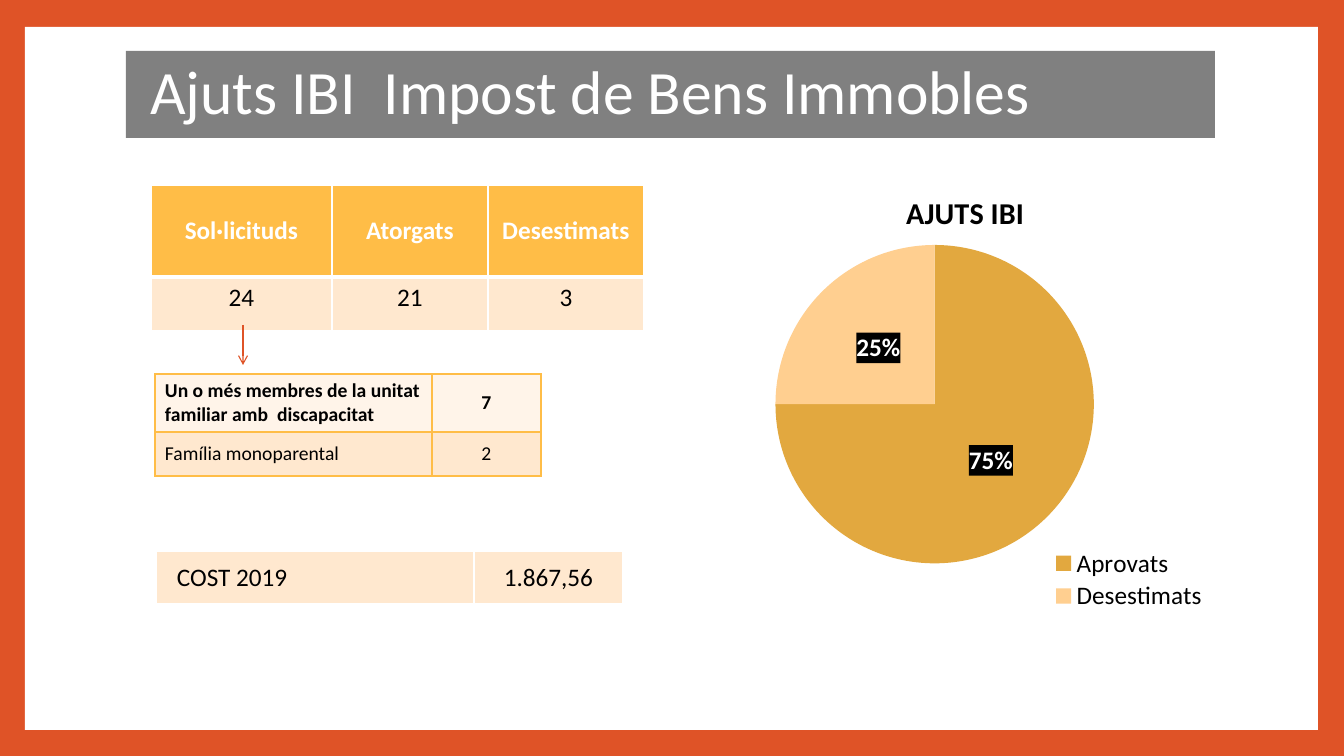
from lxml.etree import SubElement
from pptx import Presentation
from pptx.chart.data import CategoryChartData
from pptx.dml.color import RGBColor
from pptx.enum.chart import XL_CHART_TYPE, XL_LABEL_POSITION, XL_LEGEND_POSITION
from pptx.enum.shapes import MSO_CONNECTOR, MSO_SHAPE
from pptx.enum.text import MSO_ANCHOR, PP_ALIGN
from pptx.oxml import parse_xml
from pptx.oxml.ns import nsdecls, qn
from pptx.util import Pt

EMU_PER_PX = 12192000 / 1344
FONT = "Calibri"
COLORS = {
    "frame": "DF5327", "white": "FFFFFF", "black": "000000", "banner": "808080",
    "amber": "FFBD47", "peach": "FFE8CF", "cream": "FFF4E9",
    "approved": "E2A83F", "rejected": "FFCF90",
}


def px(length):
    """Turn a length in px into EMU."""
    return round(length * EMU_PER_PX)


def place(*lengths):
    """Turn several px lengths into EMU."""
    return [px(length) for length in lengths]


def rgb(name):
    """Look up a named colour."""
    return RGBColor.from_string(COLORS[name])


def style_font(font, size=18, color="black", bold=False):
    """Set the face, size, colour and weight of a font."""
    font.name, font.size, font.bold = FONT, Pt(size), bold
    font.color.rgb = rgb(color)


def write(frame, text, align=PP_ALIGN.LEFT, spacing=None, **font):
    """Write one formatted paragraph into a text frame."""
    frame.word_wrap = True
    para = frame.paragraphs[0]
    para.alignment = align
    para.line_spacing = spacing
    span = para.add_run()
    span.text = text
    style_font(span.font, **font)


def add_box(page, box, color):
    """Add a plain filled rectangle."""
    shape = page.shapes.add_shape(MSO_SHAPE.RECTANGLE, *place(*box))
    shape.shadow.inherit = False
    shape.fill.solid()
    shape.fill.fore_color.rgb = rgb(color)
    shape.line.fill.background()
    return shape


def add_banner(page, box, text):
    """Add the title banner."""
    banner = add_box(page, box, "banner")
    frame = banner.text_frame
    frame.margin_left = px(24)
    frame.vertical_anchor = MSO_ANCHOR.MIDDLE
    write(frame, text, spacing=0.9, size=44, color="white")


def set_borders(cell, color, top=1, bottom=1):
    """Draw the four borders of a table cell, with widths in points."""
    properties = cell._tc.get_or_add_tcPr()
    for side, width in (("L", 1), ("R", 1), ("T", top), ("B", bottom)):
        line = SubElement(properties, qn(f"a:ln{side}"), w=str(Pt(width)))
        fill = SubElement(line, qn("a:solidFill"))
        SubElement(fill, qn("a:srgbClr"), val=COLORS[color])


def add_grid(page, corner, widths, heights, rows, styles, border="white", rule=1, indent=10):
    """Add a table with one style per row, and a rule under its first row."""
    size = sum(widths), sum(heights)
    table = page.shapes.add_table(len(rows), len(widths), *place(*corner, *size)).table
    table.first_row = table.horz_banding = False
    for column, width in zip(table.columns, widths):
        column.width = px(width)
    for index, (row, height, values, style) in enumerate(zip(table.rows, heights, rows, styles)):
        row.height = px(height)
        fill, anchor, first_align, font = style
        for position, (cell, value) in enumerate(zip(row.cells, values)):
            set_borders(cell, border, rule if index == 1 else 1, rule if index == 0 else 1)
            cell.fill.solid()
            cell.fill.fore_color.rgb = rgb(fill)
            cell.vertical_anchor = anchor
            if position == 0:
                cell.margin_left = px(indent)
            write(cell.text_frame, value, PP_ALIGN.CENTER if position else first_align, **font)


def add_arrow(page, start, end):
    """Add a thin arrow between two points."""
    arrow = page.shapes.add_connector(MSO_CONNECTOR.STRAIGHT, *place(*start, *end))
    arrow.line.color.rgb = rgb("frame")
    arrow.line.width = Pt(0.79)
    SubElement(arrow.line._get_or_add_ln(), qn("a:tailEnd"), type="arrow")
    SubElement(arrow._element.spPr, qn("a:effectLst"))


def set_layout(element, after, target=None, **fractions):
    """Fix the place of a chart part, as fractions of the chart."""
    for old in element.findall(qn("c:layout")):
        element.remove(old)
    inner = f'<c:layoutTarget val="{target}"/>' if target else ""
    inner += "".join(f'<c:{key}Mode val="edge"/>' for key in "xy")
    inner += "".join(f'<c:{key} val="{value}"/>' for key, value in fractions.items())
    layout = parse_xml(f'<c:layout {nsdecls("c")}><c:manualLayout>{inner}</c:manualLayout></c:layout>')
    anchor = element.find(qn(after)) if after else None
    if anchor is None:
        element.insert(0, layout)
    else:
        anchor.addnext(layout)


def add_pie(page, box, title, shares):
    """Add the pie chart with its title, legend and percentages."""
    data = CategoryChartData()
    data.categories = [name for name, value, color in shares]
    data.add_series("Series 1", [value for name, value, color in shares])
    chart = page.shapes.add_chart(XL_CHART_TYPE.PIE, *place(*box), data).chart
    style_font(chart.font)
    chart.has_title = True
    write(chart.chart_title.text_frame, title, PP_ALIGN.CENTER, size=21.6, bold=True)
    set_layout(chart.chart_title._element, "c:tx", x=0.4, y=0.02)

    chart.has_legend = True
    chart.legend.position = XL_LEGEND_POSITION.RIGHT
    chart.legend.include_in_layout = False
    style_font(chart.legend.font)
    set_layout(chart.legend._element, "c:legendPos", x=0.69, y=0.82, w=0.3, h=0.15)

    plot = chart.plots[0]
    plot.vary_by_categories = True
    set_layout(chart._chartSpace.chart.plotArea, None, "inner", x=0.16, y=0.15, w=0.61, h=0.71)
    series = plot.series[0]
    for index, (name, value, color) in enumerate(shares):
        fill = series.points[index].format.fill
        fill.solid()
        fill.fore_color.rgb = rgb(color)
    labels = series.data_labels
    labels.show_percentage, labels.show_value = True, False
    labels.number_format, labels.number_format_is_linked = "0%", False
    labels.position = XL_LABEL_POSITION.CENTER
    style_font(labels.font, color="white", bold=True)
    backing = parse_xml(
        f'<c:spPr {nsdecls("c", "a")}><a:solidFill>'
        f'<a:srgbClr val="{COLORS["black"]}"/></a:solidFill></c:spPr>')
    labels._element.find(qn("c:txPr")).addprevious(backing)


def build_page(page):
    """Place every region of the slide."""
    middle, left, center = MSO_ANCHOR.MIDDLE, PP_ALIGN.LEFT, PP_ALIGN.CENTER
    page.background.fill.solid()
    page.background.fill.fore_color.rgb = rgb("frame")
    add_box(page, (25, 27, 1293, 703), "white")
    add_banner(page, (126, 51, 1089, 87), "Ajuts IBI  Impost de Bens Immobles")
    add_grid(page, (151, 185), (181, 156, 156), (92, 54),
             [("Sol·licituds", "Atorgats", "Desestimats"), ("24", "21", "3")],
             [("amber", middle, center, {"color": "white", "bold": True}),
              ("peach", MSO_ANCHOR.TOP, center, {})], rule=3)
    add_pie(page, (692, 177, 522, 450), "AJUTS IBI",
            [("Aprovats", 75, "approved"), ("Desestimats", 25, "rejected")])
    add_grid(page, (156, 551), (318, 149), (53,), [("COST 2019", "1.867,56")],
             [("peach", middle, left, {})], indent=21)
    add_grid(page, (155, 374), (277, 109), (58, 44),
             [("Un o més membres de la unitat familiar amb  discapacitat", "7"),
              ("Família monoparental", "2")],
             [("cream", middle, left, {"size": 14, "bold": True}),
              ("peach", middle, left, {"size": 14})], border="amber")
    add_arrow(page, (243, 325), (243, 365))


def main():
    """Build and save the deck."""
    deck = Presentation()
    deck.slide_width, deck.slide_height = place(1344, 756)
    build_page(deck.slides.add_slide(deck.slide_layouts[6]))
    deck.save("out.pptx")


if __name__ == "__main__":
    main()
